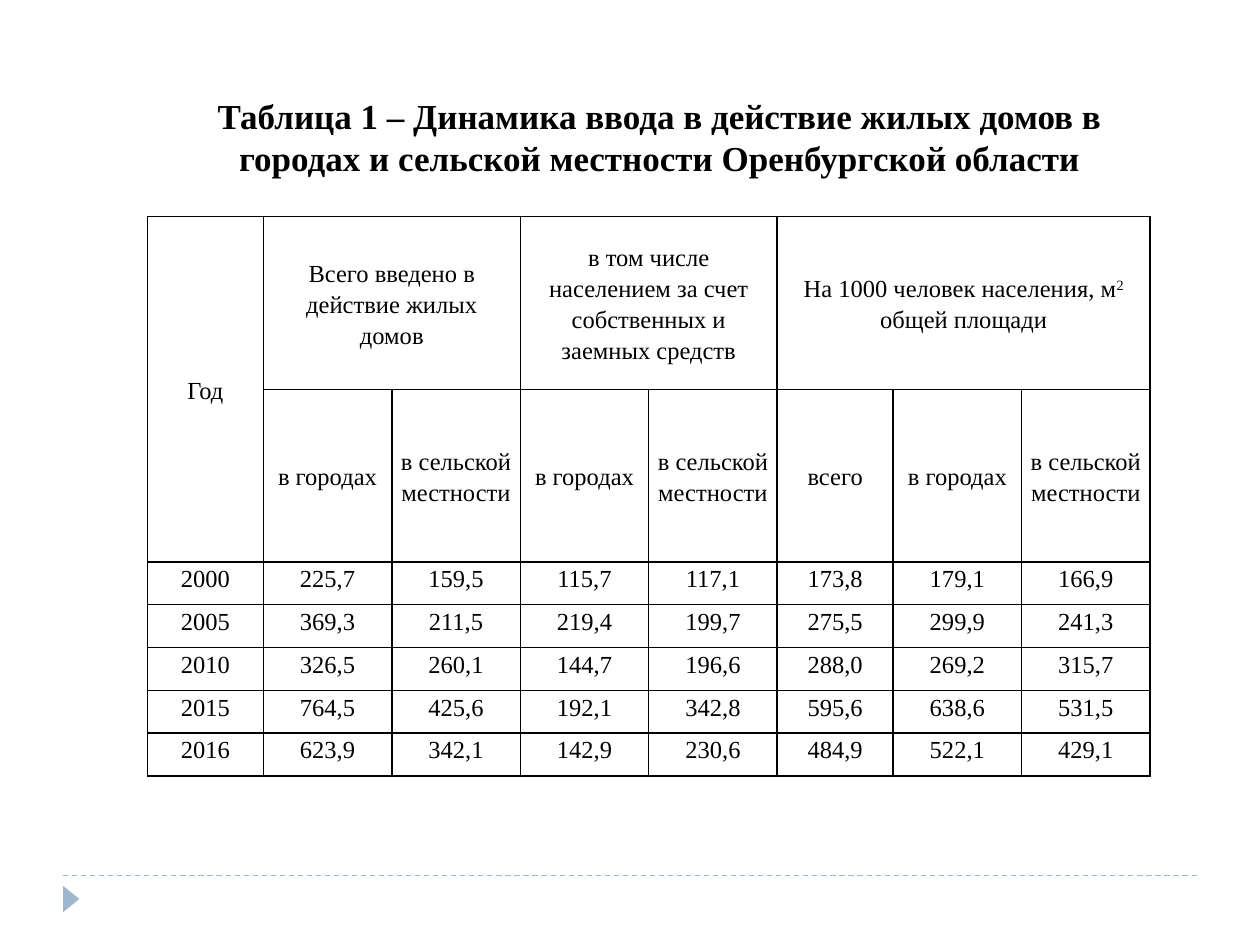
from dataclasses import dataclass

from lxml import etree
from pptx import Presentation
from pptx.dml.color import RGBColor
from pptx.enum.dml import MSO_LINE
from pptx.enum.shapes import MSO_CONNECTOR, MSO_SHAPE
from pptx.enum.text import MSO_ANCHOR, PP_ALIGN
from pptx.oxml.ns import qn
from pptx.util import Inches, Pt

CENTER = PP_ALIGN.CENTER
MIDDLE, TOP = MSO_ANCHOR.MIDDLE, MSO_ANCHOR.TOP
STRAIGHT = MSO_CONNECTOR.STRAIGHT
RECTANGLE, TRIANGLE = MSO_SHAPE.RECTANGLE, MSO_SHAPE.ISOSCELES_TRIANGLE
DASH = MSO_LINE.DASH


@dataclass(frozen=True)
class Theme:
    font: str = "Times New Roman"
    ink: str = "000000"
    paper: str = "FFFFFF"
    accent: str = "9FB8CD"
    title_size: int = 20
    table_size: int = 14
    table_spacing: float = 1.15
    border: float = 1
    rule: float = 0.75


@dataclass(frozen=True)
class Heading:
    row: int
    column: int
    text: str
    rows: int = 1
    columns: int = 1
    superscript: str = ""
    tail: str = ""


THEME = Theme()
WIDTH, HEIGHT = Inches(10), Inches(7.5)
MARGIN = 0.05  # share of the slide width

TITLE = ("Таблица 1 – Динамика ввода в действие жилых домов в "
         "городах и сельской местности Оренбургской области")
CITY, VILLAGE = "в городах", "в сельской местности"
SUBHEADINGS = [CITY, VILLAGE, CITY, VILLAGE, "всего", CITY, VILLAGE]
HEADINGS = [
    Heading(0, 0, "Год", rows=2),
    Heading(0, 1, "Всего введено в действие жилых домов", columns=2),
    Heading(0, 3, "в том числе населением за счет собственных и заемных средств",
            columns=2),
    Heading(0, 5, "На 1000 человек населения, м", columns=3,
            superscript="2", tail=" общей площади"),
    *(Heading(1, column, text) for column, text in enumerate(SUBHEADINGS, 1)),
]
HEADING_ROWS = 2
YEARS = [
    ("2000", "225,7", "159,5", "115,7", "117,1", "173,8", "179,1", "166,9"),
    ("2005", "369,3", "211,5", "219,4", "199,7", "275,5", "299,9", "241,3"),
    ("2010", "326,5", "260,1", "144,7", "196,6", "288,0", "269,2", "315,7"),
    ("2015", "764,5", "425,6", "192,1", "342,8", "595,6", "638,6", "531,5"),
    ("2016", "623,9", "342,1", "142,9", "230,6", "484,9", "522,1", "429,1"),
]
NARROW, WIDE = Inches(0.92), Inches(1.02)
COLUMN_WIDTHS = [NARROW, *[WIDE] * 4, NARROW, *[WIDE] * 2]
ROW_HEIGHTS = [Inches(1.37)] * HEADING_ROWS + [Inches(0.34)] * len(YEARS)


def color(value: str) -> RGBColor:
    return RGBColor.from_string(value)


def style_paragraph(paragraph, size: float, bold: bool = False) -> None:
    paragraph.alignment = CENTER
    font = paragraph.font
    font.name, font.size, font.bold = THEME.font, Pt(size), bold
    font.color.rgb = color(THEME.ink)


def frame_cell(cell) -> None:
    """Give the cell four solid borders and no fill."""
    properties = cell._tc.get_or_add_tcPr()
    for side in ("a:lnL", "a:lnR", "a:lnT", "a:lnB"):
        line = etree.SubElement(properties, qn(side), w=str(Pt(THEME.border)))
        fill = etree.SubElement(line, qn("a:solidFill"))
        etree.SubElement(fill, qn("a:srgbClr"), val=THEME.ink)
    cell.fill.background()


def write_cell(cell, text: str, anchor: MSO_ANCHOR):
    cell.vertical_anchor = anchor
    cell.margin_left = cell.margin_right = Inches(0.07)
    cell.margin_top = cell.margin_bottom = 0
    paragraph = cell.text_frame.paragraphs[0]
    paragraph.line_spacing = THEME.table_spacing
    style_paragraph(paragraph, THEME.table_size)
    paragraph.add_run().text = text
    return paragraph


def write_heading(table, heading: Heading) -> None:
    cell = table.cell(heading.row, heading.column)
    if heading.rows > 1 or heading.columns > 1:
        cell.merge(table.cell(heading.row + heading.rows - 1,
                              heading.column + heading.columns - 1))
    paragraph = write_cell(cell, heading.text, MIDDLE)
    if heading.superscript:
        raised = paragraph.add_run()
        raised.text = heading.superscript
        raised._r.get_or_add_rPr().set("baseline", "30000")
        paragraph.add_run().text = heading.tail


def add_housing_table(slide) -> None:
    frame = slide.shapes.add_table(
        len(ROW_HEIGHTS), len(COLUMN_WIDTHS), Inches(1.17), Inches(1.72),
        sum(COLUMN_WIDTHS), sum(ROW_HEIGHTS))
    table = frame.table
    table.first_row = table.horz_banding = False
    for column, width in zip(table.columns, COLUMN_WIDTHS):
        column.width = width
    for row, height in zip(table.rows, ROW_HEIGHTS):
        row.height = height
    for cell in table.iter_cells():
        frame_cell(cell)
    for heading in HEADINGS:
        write_heading(table, heading)
    for row, values in enumerate(YEARS, HEADING_ROWS):
        for column, value in enumerate(values):
            write_cell(table.cell(row, column), value, TOP)


def add_block(slide, preset: MSO_SHAPE, left: float, top: float,
              width: float, height: float, fill: str):
    """Add a plain filled shape; lengths are in inches."""
    block = slide.shapes.add_shape(
        preset, Inches(left), Inches(top), Inches(width), Inches(height))
    block.shadow.inherit = False
    block.fill.solid()
    block.fill.fore_color.rgb = color(fill)
    block.line.fill.background()
    return block


def add_title(slide) -> None:
    title = add_block(slide, RECTANGLE, 1.33, 0.7, 7.81, 0.77, THEME.paper)
    title.text_frame.word_wrap = True
    title.text_frame.vertical_anchor = MIDDLE
    paragraph = title.text_frame.paragraphs[0]
    style_paragraph(paragraph, THEME.title_size, bold=True)
    paragraph.add_run().text = TITLE


def add_footer(slide) -> None:
    level = Inches(6.95)
    rule = slide.shapes.add_connector(
        STRAIGHT, int(WIDTH * MARGIN), level, int(WIDTH * (1 - MARGIN)), level)
    rule.line.color.rgb = color(THEME.accent)
    rule.line.width = Pt(THEME.rule)
    rule.line.dash_style = DASH
    etree.SubElement(rule._element.spPr, qn("a:effectLst"))
    marker = add_block(slide, TRIANGLE, 0.46, 7.07, 0.21, 0.13, THEME.accent)
    marker.rotation = 90


def main() -> None:
    presentation = Presentation()
    presentation.slide_width, presentation.slide_height = WIDTH, HEIGHT
    slide = presentation.slides.add_slide(presentation.slide_layouts[6])
    add_footer(slide)
    add_housing_table(slide)
    add_title(slide)
    presentation.save("out.pptx")


if __name__ == "__main__":
    main()
